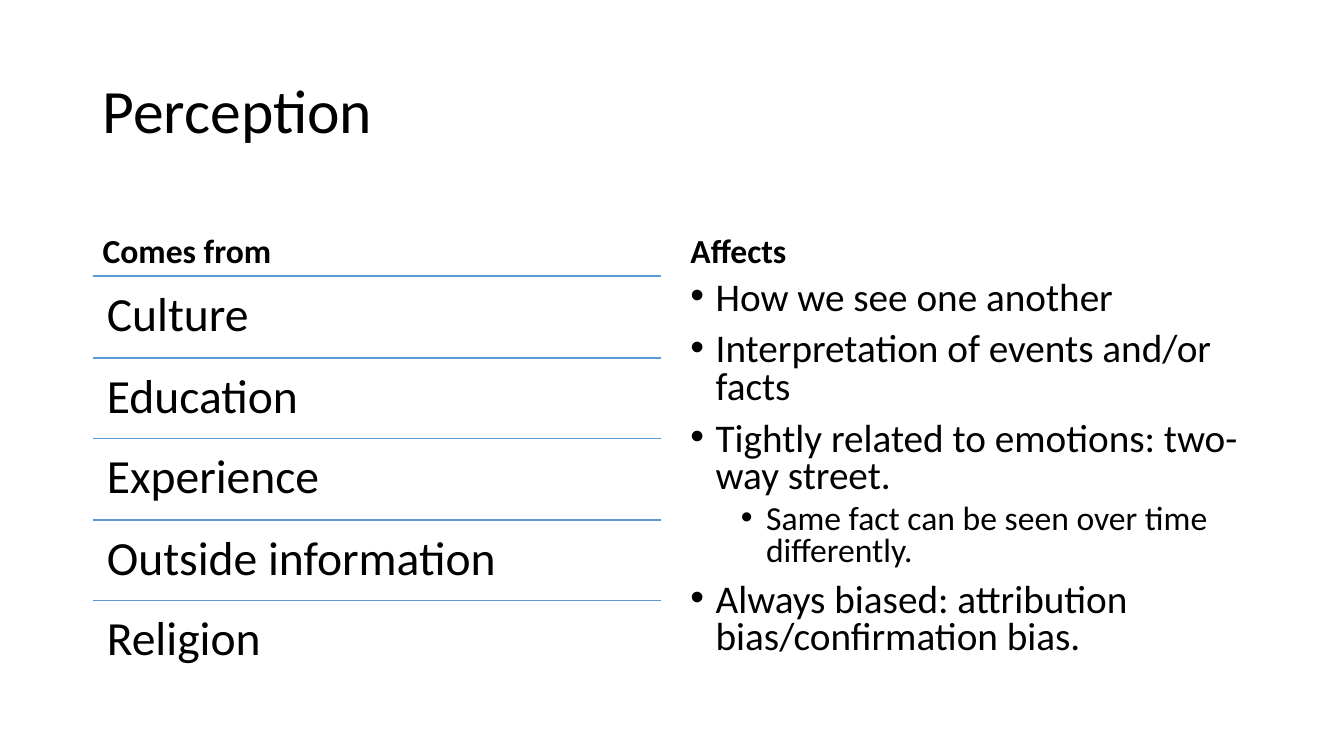
from dataclasses import dataclass

from lxml import etree
from pptx import Presentation
from pptx.dml.color import RGBColor
from pptx.enum.shapes import MSO_CONNECTOR
from pptx.enum.text import MSO_ANCHOR
from pptx.oxml.ns import qn
from pptx.util import Pt

PX = 9144  # 100 px to the inch


@dataclass(frozen=True)
class Theme:
    font: str = "Calibri"
    ink: RGBColor = RGBColor(0x00, 0x00, 0x00)
    rule: RGBColor = RGBColor(0x5B, 0x9B, 0xD5)
    title: int = 44
    heading: int = 24
    source: int = 34
    effects: tuple = (28, 24)  # by bullet level


theme = Theme()


def add_frame(left, top, width, height, anchor=MSO_ANCHOR.TOP):
    box = slide.shapes.add_textbox(left * PX, top * PX, width * PX, height * PX)
    box.text_frame.word_wrap = True
    box.text_frame.vertical_anchor = anchor
    return box.text_frame


def write(paragraph, text, size, bold=False, spacing=0.9):
    paragraph.line_spacing = spacing
    run = paragraph.add_run()
    run.text = text
    run.font.name = theme.font
    run.font.size = Pt(size)
    run.font.bold = bold
    run.font.color.rgb = theme.ink


prs = Presentation()
prs.slide_width, prs.slide_height = 1333 * PX, 750 * PX
slide = prs.slides.add_slide(prs.slide_layouts[6])

LEFT, LEFT_WIDTH = 92, 564
RIGHT, RIGHT_WIDTH = 675, 567
HEADING_TOP, HEADING_HEIGHT = 184, 90
BODY_TOP, BODY_HEIGHT = 274, 403

title = add_frame(LEFT, 40, 1150, 145, MSO_ANCHOR.MIDDLE)
write(title.paragraphs[0], "Perception", theme.title)

for heading, left, width in (
    ("Comes from", LEFT, LEFT_WIDTH),
    ("Affects", RIGHT, RIGHT_WIDTH),
):
    frame = add_frame(left, HEADING_TOP, width, HEADING_HEIGHT, MSO_ANCHOR.BOTTOM)
    write(frame.paragraphs[0], heading, theme.heading, bold=True)

# Sources of perception, each under its own rule
sources = ("Culture", "Education", "Experience", "Outside information", "Religion")
for i, source in enumerate(sources):
    top = BODY_TOP + round(i * BODY_HEIGHT / len(sources))
    rule = slide.shapes.add_connector(
        MSO_CONNECTOR.STRAIGHT,
        LEFT * PX, top * PX, (LEFT + LEFT_WIDTH) * PX, top * PX,
    )
    rule.line.color.rgb = theme.rule
    rule.line.width = Pt(1)
    etree.SubElement(rule.element.spPr, qn("a:effectLst"))

    row = add_frame(LEFT, top, LEFT_WIDTH, 81)
    row.margin_left = row.margin_right = row.margin_top = row.margin_bottom = 14 * PX
    write(row.paragraphs[0], source, theme.source)

# Effects of perception, as a two-level bullet list
effects = (
    (0, "How we see one another"),
    (0, "Interpretation of events and/or facts"),
    (0, "Tightly related to emotions: two-way street."),
    (1, "Same fact can be seen over time differently."),
    (0, "Always biased: attribution bias/confirmation bias."),
)
effect_list = add_frame(RIGHT, BODY_TOP, RIGHT_WIDTH, BODY_HEIGHT)
for i, (level, effect) in enumerate(effects):
    bullet = effect_list.add_paragraph() if i else effect_list.paragraphs[0]
    bullet.level = level
    properties = bullet._p.get_or_add_pPr()
    properties.set("marL", str((25 + 50 * level) * PX))
    properties.set("indent", str(-25 * PX))
    etree.SubElement(properties, qn("a:buFont")).set("typeface", "Arial")
    etree.SubElement(properties, qn("a:buChar")).set("char", "•")
    if i:
        bullet.space_before = Pt(5 if level else 10)
    write(bullet, effect, theme.effects[level], spacing=0.8)

prs.save("out.pptx")
